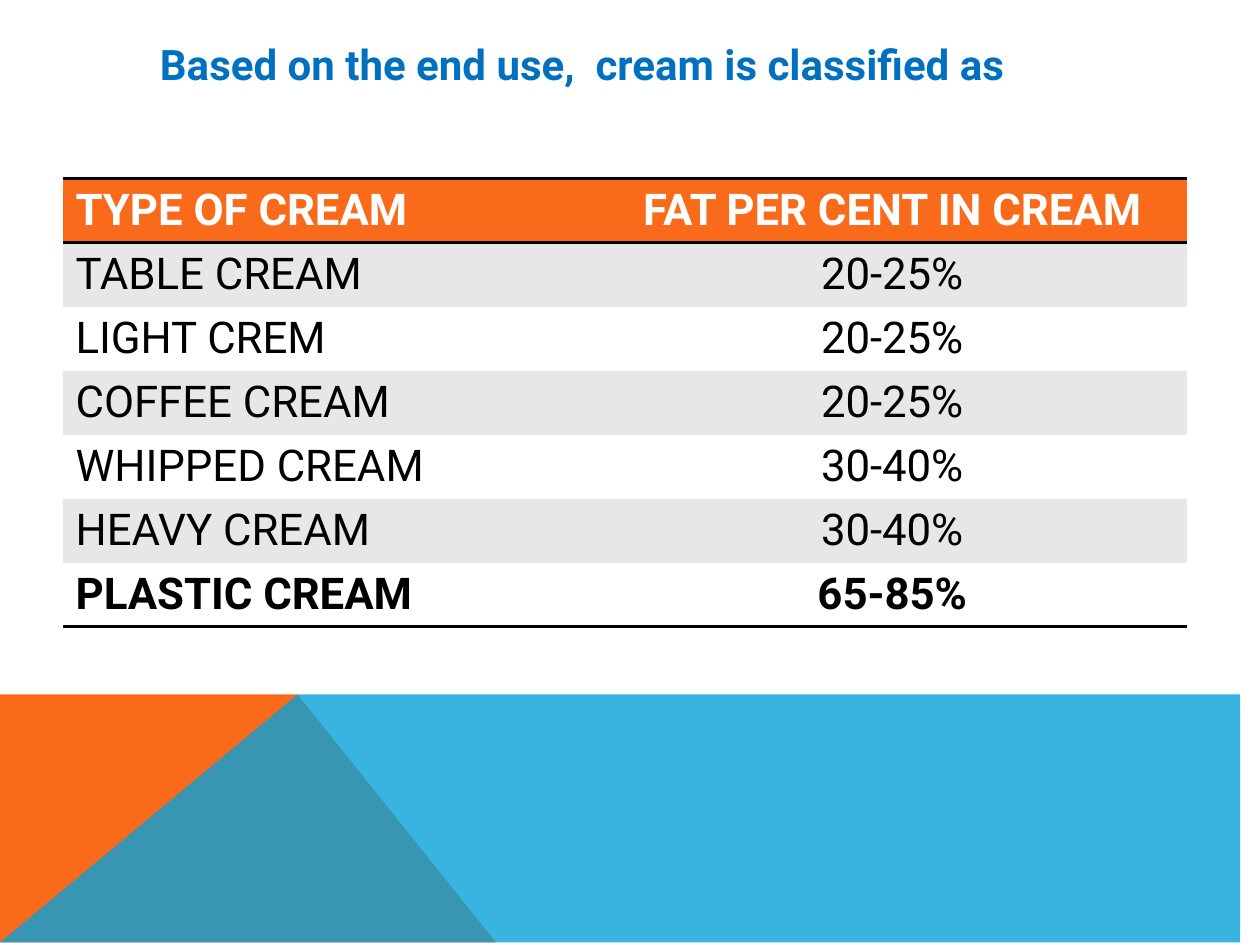
import pptx
import pptx.dml.color
import pptx.enum.text
import pptx.oxml
import pptx.oxml.ns
import pptx.util
from lxml import etree

Cm = pptx.util.Cm
Pt = pptx.util.Pt
PP_ALIGN = pptx.enum.text.PP_ALIGN
ANCHOR = pptx.enum.text.MSO_ANCHOR
qn = pptx.oxml.ns.qn

FONT = "Roboto"
COLORS = {
    "orange": "F96A1B",
    "blue": "08A1D9",
    "title": "0070C0",
    "black": "000000",
    "white": "FFFFFF",
    "band": "E7E7E7",
}
NO_STYLE = "{2D5ABB26-0587-4C30-8999-92F81FD0307C}"
ROWS = [
    ("TYPE OF CREAM", "FAT PER CENT IN CREAM"),
    ("TABLE CREAM", "20-25%"),
    ("LIGHT CREM", "20-25%"),
    ("COFFEE CREAM", "20-25%"),
    ("WHIPPED CREAM", "30-40%"),
    ("HEAVY CREAM", "30-40%"),
    ("PLASTIC CREAM", "65-85%"),
]


def rgb(name):
    return pptx.dml.color.RGBColor.from_string(COLORS[name])


def style_paragraph(p, size, color, bold, align):
    p.alignment = align
    p.font.name = FONT
    p.font.size = Pt(size)
    p.font.bold = bold
    p.font.color.rgb = rgb(color)


def add_polygon(slide, points, color, alpha=None):
    builder = slide.shapes.build_freeform(*points[0], scale=Cm(1))
    builder.add_line_segments(points[1:], close=True)
    sp = builder.convert_to_shape()
    sp.shadow.inherit = False
    sp.fill.solid()
    sp.fill.fore_color.rgb = rgb(color)
    sp.line.fill.background()
    if alpha is not None:
        clr = sp.fill._xPr.find(".//" + qn("a:srgbClr"))
        etree.SubElement(clr, qn("a:alpha")).set("val", str(alpha * 1000))


def add_footer_band(slide, left, top, width, height):
    right, bottom = left + width, top + height
    peak, foot = left + 5.66, left + 9.93
    add_polygon(slide, [(left, bottom), (left, top), (peak, top), (foot, bottom)], "orange")
    add_polygon(slide, [(left, bottom), (peak, top), (right, top), (right, bottom)], "blue", 80)


def add_title(slide, left, top, width, height):
    sp = slide.shapes.title
    sp.left, sp.top, sp.width, sp.height = Cm(left), Cm(top), Cm(width), Cm(height)
    tf = sp.text_frame
    tf.word_wrap = True
    tf.auto_size = pptx.enum.text.MSO_AUTO_SIZE.NONE
    tf.vertical_anchor = ANCHOR.TOP
    tf.text = "Based on the end use,  cream is classified as"
    style_paragraph(tf.paragraphs[0], 24, "title", True, PP_ALIGN.LEFT)


def add_border(cell, side):
    ln = etree.SubElement(cell._tc.get_or_add_tcPr(), qn("a:" + side), w=str(Pt(2)))
    fill = etree.SubElement(ln, qn("a:solidFill"))
    etree.SubElement(fill, qn("a:srgbClr"), val=COLORS["black"])


def add_cream_table(slide, left, top, widths, row_height):
    last = len(ROWS) - 1
    frame = slide.shapes.add_table(
        len(ROWS), len(widths), Cm(left), Cm(top), Cm(sum(widths)), Cm(row_height * len(ROWS))
    )
    table = frame.table
    table._tbl.tblPr.find(qn("a:tableStyleId")).text = NO_STYLE
    for column, width in zip(table.columns, widths):
        column.width = Cm(width)
    for i, texts in enumerate(ROWS):
        table.rows[i].height = Cm(row_height)
        fill = "orange" if i == 0 else "band" if i % 2 else "white"
        for j, text in enumerate(texts):
            cell = table.cell(i, j)
            if i == 0:
                add_border(cell, "lnT")
            if i in (0, last):
                add_border(cell, "lnB")
            cell.fill.solid()
            cell.fill.fore_color.rgb = rgb(fill)
            cell.text = text
            style_paragraph(
                cell.text_frame.paragraphs[0],
                25,
                "black" if i else "white",
                i in (0, last),
                PP_ALIGN.CENTER if j else PP_ALIGN.LEFT,
            )


def main():
    prs = pptx.Presentation()
    prs.slide_width, prs.slide_height = Cm(25.4), Cm(19.05)
    slide = prs.slides.add_slide(prs.slide_layouts.get_by_name("Title Only"))
    add_footer_band(slide, 0, 14.02, 25.4, 5.03)
    add_title(slide, 2.97, 0.64, 17.78, 8.46)
    add_cream_table(slide, 1.27, 3.6, (10.77, 11.89), 1.29)
    prs.save("out.pptx")


if __name__ == "__main__":
    main()
